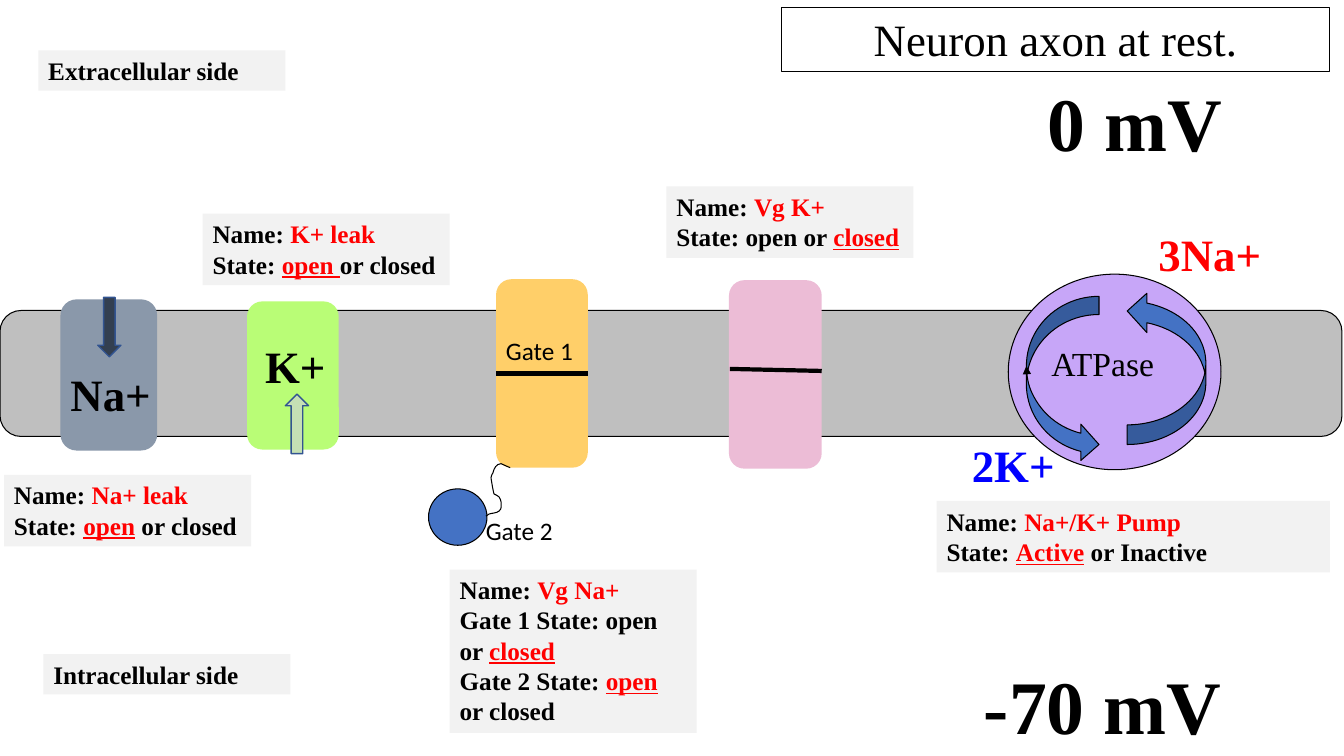
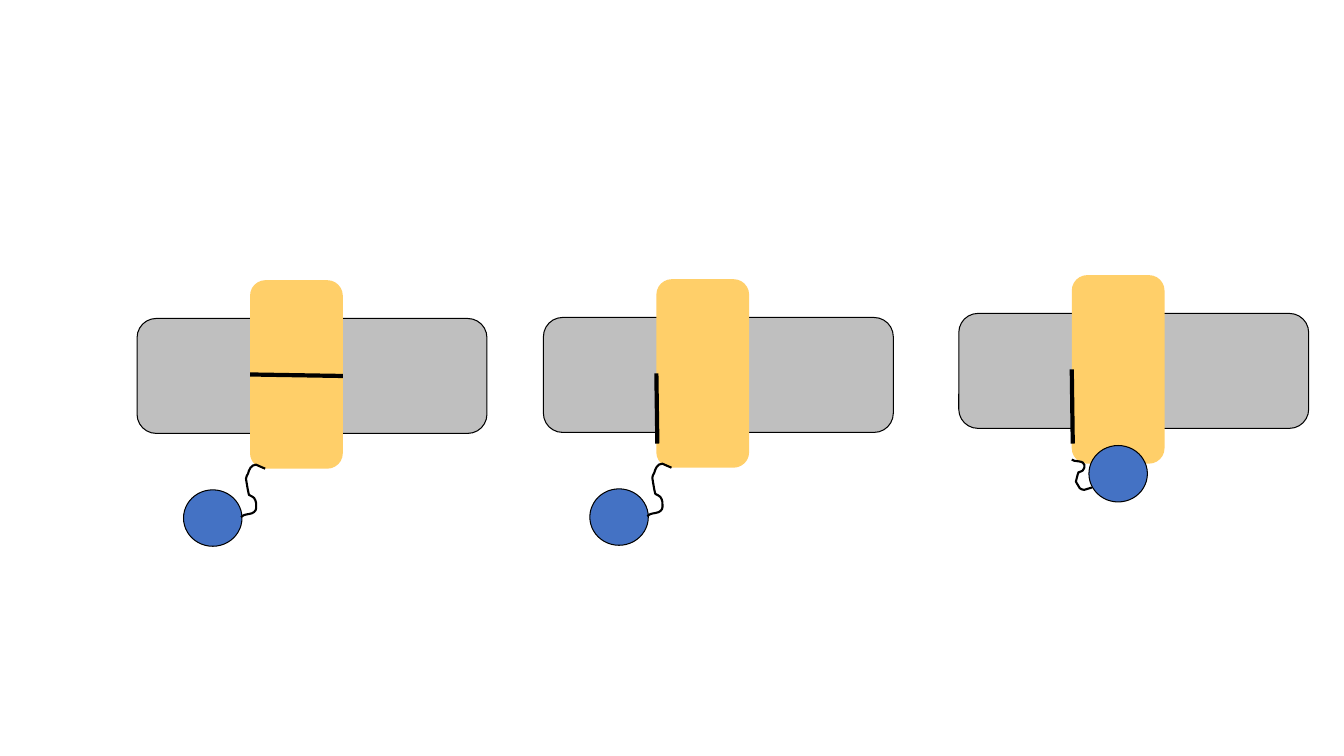
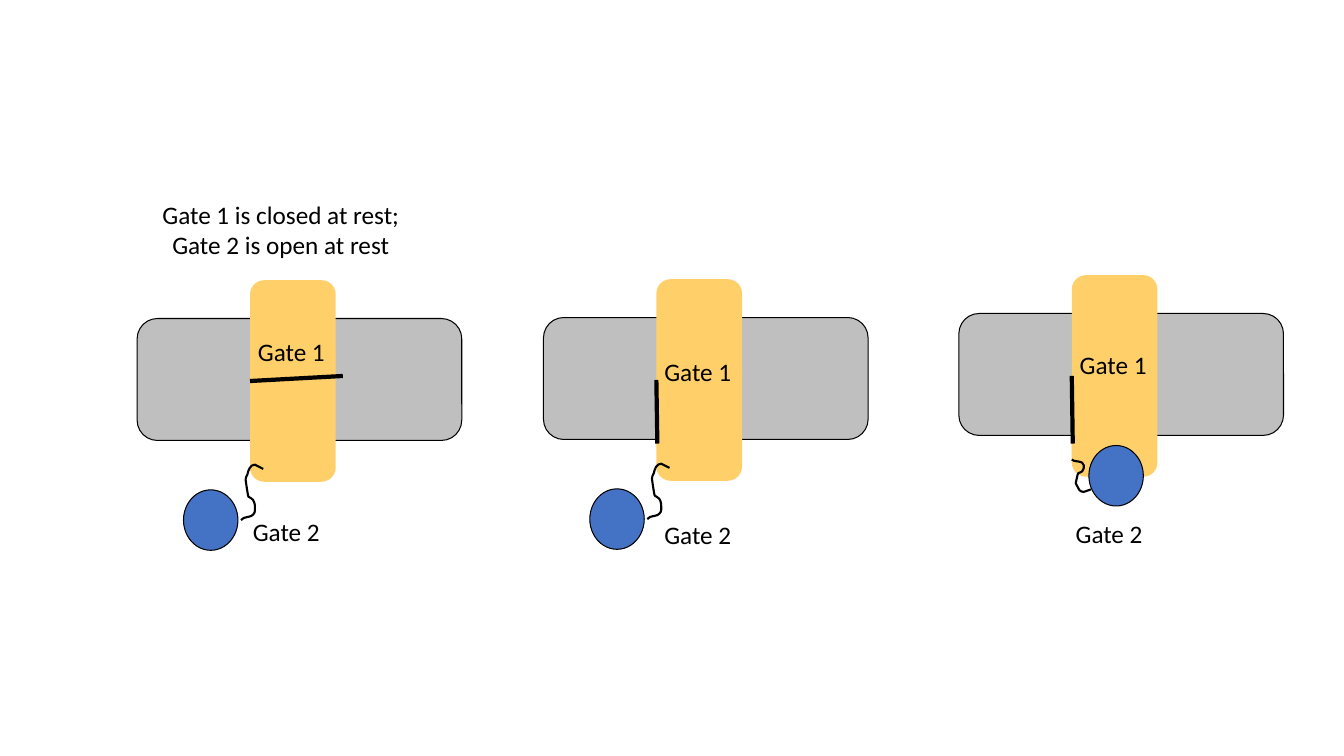
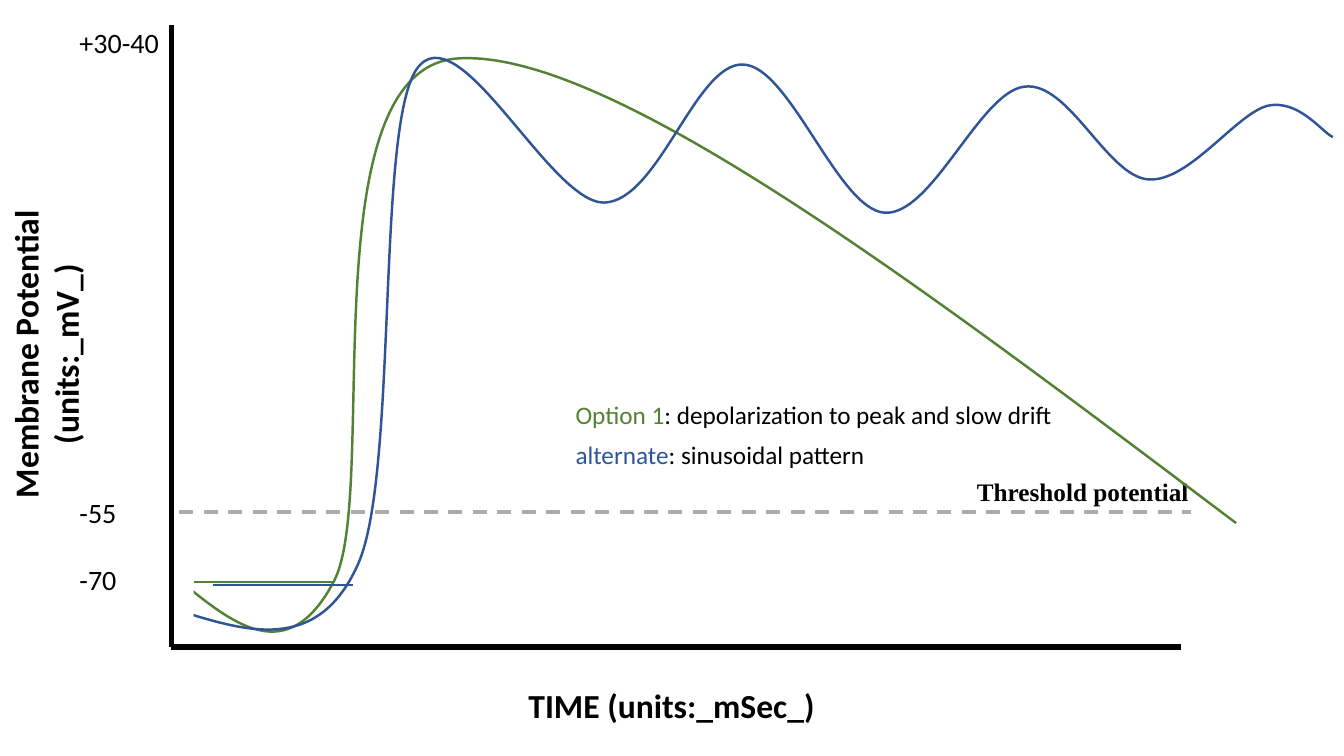
import pptx
import pptx.util
import pptx.dml.color
import pptx.enum.dml
import pptx.enum.shapes
import pptx.enum.text
import pptx.oxml.ns
from lxml import etree

Inches = pptx.util.Inches
Pt = pptx.util.Pt
RGBColor = pptx.dml.color.RGBColor
SHAPE = pptx.enum.shapes.MSO_SHAPE
ALIGN = pptx.enum.text.PP_ALIGN
AUTO_SIZE = pptx.enum.text.MSO_AUTO_SIZE
qn = pptx.oxml.ns.qn

BLACK = RGBColor(0x00, 0x00, 0x00)
WHITE = RGBColor(0xFF, 0xFF, 0xFF)
RED = RGBColor(0xFF, 0x00, 0x00)
ION_BLUE = RGBColor(0x00, 0x00, 0xFF)
BLUE = RGBColor(0x44, 0x72, 0xC4)
MEMBRANE = RGBColor(0xBF, 0xBF, 0xBF)
CAPTION = RGBColor(0xF2, 0xF2, 0xF2)
NA_LEAK = RGBColor(0x8A, 0x98, 0xAA)
K_LEAK = RGBColor(0xB9, 0xFD, 0x76)
VG_NA = RGBColor(0xFF, 0xCF, 0x69)
VG_K = RGBColor(0xEC, 0xBC, 0xD6)
PUMP = RGBColor(0xC7, 0xA6, 0xF8)
NA_ARROW = RGBColor(0x33, 0x3F, 0x50)
K_ARROW = RGBColor(0xC5, 0xE0, 0xB4)
ARROW_LINE = RGBColor(0x32, 0x54, 0x91)
DASH_GREY = RGBColor(0xAF, 0xAB, 0xAB)
GREEN = RGBColor(0x54, 0x82, 0x35)
DARK_BLUE = RGBColor(0x2F, 0x55, 0x97)
SERIF, SANS = "Times New Roman", "Calibri"

# Tether of the inactivation ball: a start point, then three points per Bezier piece
TETHER_W, TETHER_H = 0.24, 0.52
TETHER = [(0.24, 0.04),
          (0.21, 0.03), (0.18, 0.01), (0.15, 0), (0.1, 0), (0.08, 0.05), (0.07, 0.09),
          (0.06, 0.11), (0.05, 0.12), (0.05, 0.14), (0.05, 0.14), (0.07, 0.27), (0.08, 0.3),
          (0.1, 0.31), (0.12, 0.32), (0.13, 0.33), (0.14, 0.35), (0.15, 0.36), (0.15, 0.38),
          (0.15, 0.41), (0.16, 0.45), (0.13, 0.47), (0.11, 0.49), (0.06, 0.49), (0.03, 0.5),
          (0.02, 0.51), (0.01, 0.51), (0, 0.52)]


def draw(s, kind, geometry, fill=None, line=None, width=0.75):
    """Add a "line" (two ends), a "curve" (Bezier points) or a preset shape (box)."""
    if kind == "line":
        sp = s.shapes.add_connector(pptx.enum.shapes.MSO_CONNECTOR.STRAIGHT, *map(Inches, geometry))
    elif kind == "curve":
        points = [(Inches(x), Inches(y)) for x, y in geometry]
        builder = s.shapes.build_freeform(*points[0])
        builder.add_line_segments(points[3::3], close=False)
        sp = builder.convert_to_shape()
        # Bend each straight piece with its two control points
        for i, piece in enumerate(list(sp._element.iter(qn("a:lnTo")))):
            bend = etree.Element(qn("a:cubicBezTo"))
            for x, y in points[3 * i + 1:3 * i + 4]:
                etree.SubElement(bend, qn("a:pt"), x=str(x - sp.left), y=str(y - sp.top))
            piece.getparent().replace(piece, bend)
    else:
        sp = s.shapes.add_shape(kind, *map(Inches, geometry))
    if fill is not None:
        sp.fill.solid()
        sp.fill.fore_color.rgb = fill
    elif kind != "line":
        sp.fill.background()
    if line is None:
        sp.line.fill.background()
    else:
        sp.line.color.rgb = line
        sp.line.width = Pt(width)
    if kind == "line":
        etree.SubElement(sp._element.spPr, qn("a:effectLst"))
    else:
        sp.shadow.inherit = False
    return sp


def write(s, box, paras, sp=None, size=18, font=SANS, color=BLACK, bold=False,
          align=ALIGN.LEFT, fill=None, wrap=True, auto_size=AUTO_SIZE.SHAPE_TO_FIT_TEXT):
    """Fill sp, or a new text box; a run is a string or (text, colour, underline)."""
    place = [Inches(v) for v in box]
    if sp is None:
        sp = s.shapes.add_textbox(*place)
    else:
        sp.left, sp.top, sp.width, sp.height = place
    if fill is not None:
        sp.fill.solid()
        sp.fill.fore_color.rgb = fill
    tf = sp.text_frame
    tf.word_wrap = wrap
    tf.auto_size = auto_size
    tf.vertical_anchor = pptx.enum.text.MSO_ANCHOR.TOP
    for i, runs in enumerate(paras):
        p = tf.add_paragraph() if i else tf.paragraphs[0]
        p.alignment = align
        for run in runs:
            text, ink, underline = (run, color, False) if isinstance(run, str) else run
            r = p.add_run()
            r.text = text
            r.font.name, r.font.size, r.font.bold = font, Pt(size), bold
            r.font.color.rgb = ink
            if underline:
                r.font.underline = True
    return sp


prs = pptx.Presentation()
prs.slide_width, prs.slide_height = Inches(13.33), Inches(7.5)
title_layout, blank_layout = prs.slide_layouts[5], prs.slide_layouts[6]

# Slide 1: channels and pump in the resting membrane
s = prs.slides.add_slide(title_layout)
title = write(s, (7.75, 0.07, 5.44, 0.64), [["Neuron axon at rest."]], sp=s.shapes.title,
              size=32, font=SERIF, align=ALIGN.CENTER, auto_size=AUTO_SIZE.NONE)
title.line.color.rgb = BLACK
title.line.width = Pt(0.75)

draw(s, SHAPE.ROUNDED_RECTANGLE, (0, 3.08, 13.31, 1.25), MEMBRANE, BLACK)
for box, fill in [((0.6, 2.97, 0.96, 1.5), NA_LEAK), ((2.45, 2.99, 0.91, 1.47), K_LEAK),
                  ((7.23, 2.78, 0.92, 1.87), VG_K)]:
    draw(s, SHAPE.ROUNDED_RECTANGLE, box, fill)
draw(s, "line", (7.24, 3.66, 8.15, 3.68), line=BLACK, width=3)

draw(s, SHAPE.OVAL, (10, 2.72, 2.11, 1.94), PUMP, BLACK)
k_turn = draw(s, SHAPE.CURVED_RIGHT_ARROW, (10.18, 2.94, 0.72, 1.65), BLUE, BLACK)
etree.SubElement(k_turn._element.spPr.find(qn("a:ln")), qn("a:headEnd"), type="triangle")
na_turn = draw(s, SHAPE.CURVED_LEFT_ARROW, (11.18, 2.89, 0.78, 1.52), BLUE, BLACK)
na_turn._element.spPr.find(qn("a:xfrm")).set("flipV", "1")

pore = draw(s, SHAPE.ROUNDED_RECTANGLE, (4.92, 2.77, 0.91, 1.87), VG_NA)
gate = draw(s, "line", (4.92, 3.7, 5.83, 3.7), line=BLACK, width=3)
gate.begin_connect(pore, 1)
gate.end_connect(pore, 3)
draw(s, SHAPE.OVAL, (4.25, 4.85, 0.58, 0.56), BLUE, BLACK)
draw(s, "curve", [(4.82 + x, 4.6 + y) for x, y in TETHER], line=BLACK)

for box, text, size, color, bold in [
        ((0.6, 3.59, 1.02, 0.64), "Na+", 32, BLACK, True),
        ((2.53, 3.31, 1.02, 0.64), "K+", 32, BLACK, True),
        ((10.29, 0.7, 2.23, 1.01), "0 mV", 54, BLACK, True),
        ((9.66, 6.49, 2.71, 1.01), "-70 mV", 54, BLACK, True),
        ((9.54, 4.29, 1.22, 0.64), "2K+", 32, ION_BLUE, True),
        ((11.39, 2.2, 1.35, 0.64), "3Na+", 32, RED, True),
        ((10.33, 3.35, 1.28, 0.51), "ATPase", 24, BLACK, False)]:
    write(s, box, [[text]], size=size, font=SERIF, color=color, bold=bold)

for box, name, states in [
        ((9.29, 4.97, 3.9, 0.71), "Na+/K+ Pump",
         [["State: ", ("Active", RED, True), " or Inactive"]]),
        ((0.04, 4.71, 2.45, 0.71), "Na+ leak",
         [["State: ", ("open", RED, True), " or closed"]]),
        ((2.01, 2.12, 2.45, 0.71), "K+ leak",
         [["State: ", ("open ", RED, True), "or closed"]]),
        ((4.46, 5.65, 2.45, 1.62), "Vg Na+",
         [["Gate 1 State: open or ", ("closed", RED, True)],
          ["Gate 2 State: ", ("open", RED, True), " or closed"]]),
        ((6.61, 1.85, 2.45, 0.71), "Vg K+",
         [["State: open or ", ("closed", RED, True)]])]:
    write(s, box, [["Name: ", (name, RED, False)]] + states, font=SERIF, bold=True, fill=CAPTION)

draw(s, SHAPE.DOWN_ARROW, (0.97, 2.95, 0.23, 0.59), NA_ARROW, ARROW_LINE, 1)
draw(s, SHAPE.DOWN_ARROW, (2.83, 3.91, 0.23, 0.59), K_ARROW, ARROW_LINE, 1).rotation = 180
write(s, (4.92, 3.28, 0.87, 0.4), [["Gate 1"]])
write(s, (4.72, 5.06, 0.87, 0.4), [["Gate 2"]])
for x, y, side in [(0.43, 6.49, "Intracellular side"), (0.38, 0.5, "Extracellular side")]:
    write(s, (x, y, 2.45, 0.4), [[side]], font=SERIF, bold=True, fill=CAPTION)

# Slides 2 and 3: open, inactivated and closed sodium channel, plain and labelled
CHANNELS = [("open", 5.39, 3.15), ("inactivated", 9.51, 3.11), ("closed", 1.36, 3.16)]
PLAIN = dict(membrane=(3.47, 1.14), pore=(0.92, 1.87), ball=(0.58, 0.56),
             tether=(0.24, 0.52), bent_tether=(0.2, 0.3))
LABELLED = dict(membrane=(3.22, 1.21), pore=(0.85, 2), ball=(0.54, 0.6),
                tether=(0.22, 0.55), bent_tether=(0.19, 0.32))
for sizes in (PLAIN, LABELLED):
    s = prs.slides.add_slide(blank_layout)
    for state, x, y in CHANNELS:
        draw(s, SHAPE.ROUNDED_RECTANGLE, (x, y, *sizes["membrane"]), MEMBRANE, BLACK)
        pore = draw(s, SHAPE.ROUNDED_RECTANGLE, (x + 1.12, y - 0.38, *sizes["pore"]), VG_NA)
        if state == "inactivated":
            ball_x, ball_y = x + 1.29, y + 1.31
            w, h = sizes["bent_tether"]
            tether = [(x + 1.12 + px * w / TETHER_W, y + 1.45 + h - py * h / TETHER_H)
                      for px, py in TETHER]
        else:
            ball_x, ball_y = x + 0.46, y + 1.7
            w, h = sizes["tether"]
            tether = [(x + 1.03 + px * w / TETHER_W, y + 1.45 + py * h / TETHER_H)
                      for px, py in TETHER]
        draw(s, SHAPE.OVAL, (ball_x, ball_y, *sizes["ball"]), BLUE, BLACK)
        gate_end = (x + 2.04, y + 0.57) if state == "closed" else (x + 1.13, 4.4)
        gate = draw(s, "line", (x + 1.12, y + 0.55, *gate_end), line=BLACK, width=3)
        gate.begin_connect(pore, 1)
        draw(s, "curve", tether, line=BLACK, width=1.5)

write(s, (1.32, 1.93, 2.93, 0.71), [["Gate 1 is closed at rest; Gate 2 is open at rest"]],
      align=ALIGN.CENTER)
for label, x, y, w in [("Gate 1", 2.46, 3.29, 0.9), ("Gate 2", 2.41, 5.07, 1.53),
                       ("Gate 1", 6.49, 3.49, 0.92), ("Gate 2", 6.49, 5.1, 1.02),
                       ("Gate 1", 10.61, 3.42, 0.89), ("Gate 2", 10.57, 5.09, 0.94)]:
    write(s, (x, y, w, 0.4), [[label]])

# Slide 4: membrane potential over time
s = prs.slides.add_slide(blank_layout)
draw(s, "line", (1.7, 0.25, 1.7, 6.42), line=BLACK, width=3.75)
draw(s, "line", (11.71, 6.42, 1.7, 6.42), line=BLACK, width=3.75)
write(s, (5.12, 6.75, 3.08, 0.5), [["TIME (units:_mSec_)"]], size=24, bold=True, align=ALIGN.CENTER)
write(s, (-1.5, 3.06, 3.91, 0.91), [["Membrane Potential (units:_mV_)"]], size=24, bold=True,
      align=ALIGN.CENTER).rotation = 270
ticks = write(s, (0.69, 0.2, 1.23, 5.82), [["+30-40"], ["-55"], ["-70"]], size=20)
for p, gap in zip(ticks.text_frame.paragraphs, (0, 312, 24)):
    p.space_before = Pt(gap)
write(s, (9.59, 4.68, 2.92, 0.4), [["Threshold potential"]], font=SERIF, bold=True)
threshold = draw(s, "line", (1.78, 5.08, 11.81, 5.08), line=DASH_GREY, width=2.5)
threshold.line.dash_style = pptx.enum.dml.MSO_LINE.DASH
write(s, (5.61, 3.91, 4.99, 0.4),
      [[("Option 1", GREEN, False), ": depolarization to peak and slow drift"]], wrap=False)
write(s, (5.61, 4.31, 3.1, 0.4),
      [[("alternate", DARK_BLUE, False), ": sinusoidal pattern"]], wrap=False)

slow_drift = [(1.77, 5.75), (2.31, 6.19), (2.85, 6.64), (3.31, 5.77), (3.77, 4.91), (3.05, 0.68),
              (4.54, 0.58), (6.03, 0.48), (9.14, 2.84), (12.26, 5.19)]
sinusoid = [(1.75, 6.05), (2.45, 6.27), (3.15, 6.49), (3.55, 5.6), (3.95, 4.71), (3.73, 1.29),
            (4.13, 0.69), (4.54, 0.09), (5.45, 2.01), (5.99, 2.01), (6.53, 2), (6.9, 0.62),
            (7.37, 0.64), (7.83, 0.65), (8.31, 2.07), (8.77, 2.11), (9.24, 2.15), (9.72, 0.91),
            (10.16, 0.86), (10.6, 0.8), (10.98, 1.75), (11.39, 1.78), (11.79, 1.81),
            (12.26, 1.13), (12.57, 1.05), (12.88, 0.98), (13.11, 1.31), (13.22, 1.36)]
for points, rest_x, rest_y, color in [(slow_drift, 1.92, 5.77, GREEN),
                                      (sinusoid, 2.11, 5.8, DARK_BLUE)]:
    draw(s, "curve", points, line=color, width=1.75)
    draw(s, "line", (rest_x, rest_y, rest_x + 1.39, rest_y), line=color, width=1.5)
draw(s, SHAPE.RECTANGLE, (1.74, 5.52, 0.18, 0.73), WHITE)

prs.save("out.pptx")
